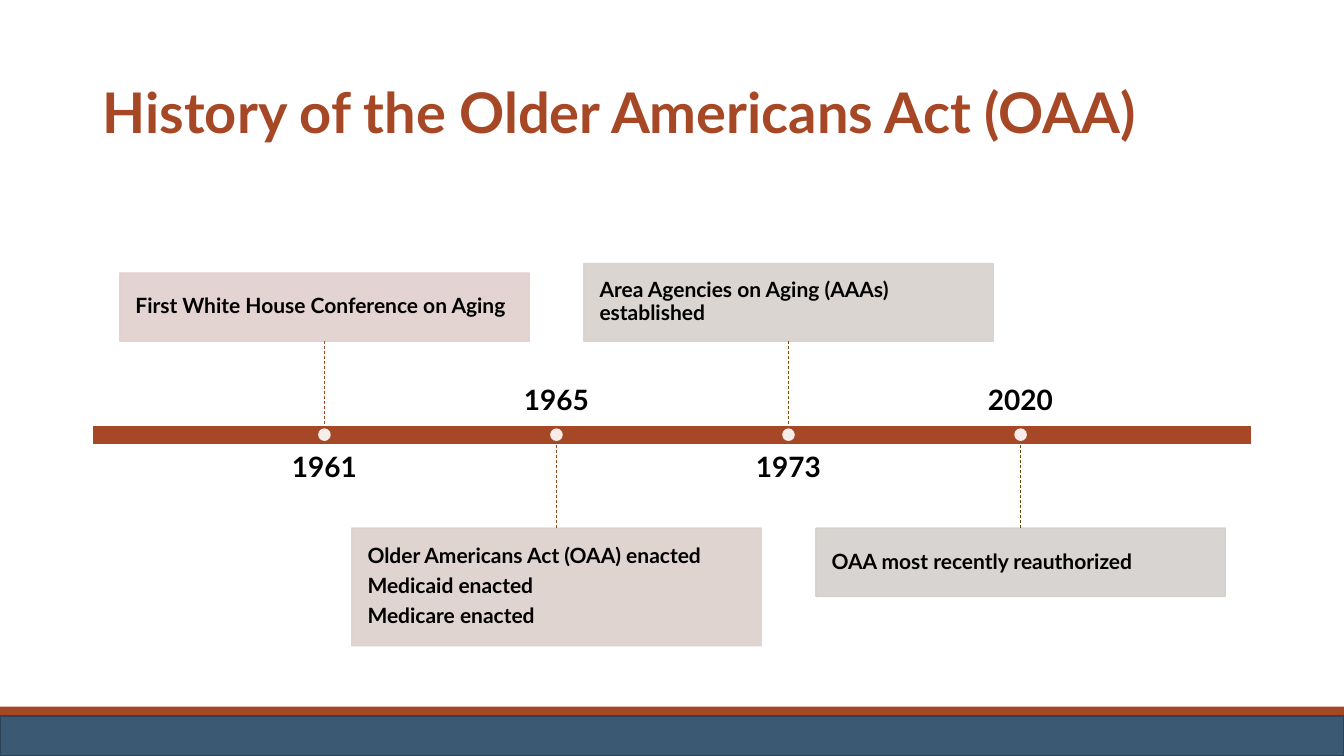
from lxml import etree
from pptx import Presentation, util as u
from pptx.dml.color import RGBColor
from pptx.enum import dml, shapes, text
from pptx.oxml import ns

PX = 9525  # EMU per px, 96 px to the inch
RUST = RGBColor(0xA6, 0x48, 0x26)
BLUE = RGBColor(0x3C, 0x59, 0x73)
NAVY = RGBColor(0x2C, 0x42, 0x55)
WHITE = RGBColor(0xFF, 0xFF, 0xFF)
BLACK = RGBColor(0, 0, 0)

BAR_LEFT, BAR_TOP, BAR_WIDTH, BAR_HEIGHT = 88, 405, 1104, 19
BAR_BOTTOM = BAR_TOP + BAR_HEIGHT
STEP = 221
BOX_WIDTH, DATE_WIDTH, DATE_HEIGHT, DOT = 390, 354, 53, 12
UPPER_BOX_BOTTOM, LOWER_BOX_TOP = 325, 503

# year, card height, card colour, connector colour, lines of text
EVENTS = [
    ("1961", 65, RGBColor(0xE1, 0xCF, 0xCD), RUST,
     ["First White House Conference on Aging"]),
    ("1965", 112, RGBColor(0xDD, 0xD0, 0xCC), RGBColor(0x94, 0x4B, 0x17),
     ["Older Americans Act (OAA) enacted", "Medicaid enacted", "Medicare enacted"]),
    ("1973", 74, RGBColor(0xD8, 0xD1, 0xCC), RGBColor(0x7E, 0x4D, 0x0B),
     ["Area Agencies on Aging (AAAs) established"]),
    ("2020", 65, RGBColor(0xD3, 0xD0, 0xCC), RGBColor(0x64, 0x4A, 0x03),
     ["OAA most recently reauthorized"]),
]

deck = Presentation()
deck.slide_width, deck.slide_height = 1280 * PX, 720 * PX
slide = deck.slides.add_slide(deck.slide_layouts[6])


def add_block(kind, left, top, width, height, fill, line=None, opacity=100):
    """Add a filled shape; opacity is a percentage for fill and line."""
    block = slide.shapes.add_shape(kind, left * PX, top * PX, width * PX, height * PX)
    block.shadow.inherit = False
    block.fill.solid()
    block.fill.fore_color.rgb = fill
    if line is None:
        block.line.fill.background()
    else:
        block.line.color.rgb = line
        block.line.width = u.Pt(1)
    if opacity < 100:
        for colour in block._element.spPr.iter(ns.qn("a:srgbClr")):
            etree.SubElement(colour, ns.qn("a:alpha"), val=str(opacity * 1000))
    return block


def write(box, lines, size, colour, anchor, align, inset_x, inset_y, after=0):
    frame = box.text_frame
    frame.word_wrap = True
    frame.vertical_anchor = anchor
    frame.margin_left = frame.margin_right = inset_x * PX
    frame.margin_top = frame.margin_bottom = inset_y * PX
    frame.text = "\n".join(lines)
    for para in frame.paragraphs:
        para.alignment = align
        para.line_spacing = 0.9
        para.space_after = u.Pt(after)
        for span in para.runs:
            span.font.name = "Lato"
            span.font.size = u.Pt(size)
            span.font.bold = True
            span.font.color.rgb = colour


RECT = shapes.MSO_SHAPE.RECTANGLE
ANCHOR, ALIGN = text.MSO_ANCHOR, text.PP_ALIGN

add_block(RECT, 0, 673, 1280, 47, RUST)
add_block(RECT, 0, 682, 1280, 38, BLUE, NAVY)

title = slide.shapes.add_textbox(88 * PX, 55 * PX, 1104 * PX, 110 * PX)
write(title, ["History of the Older Americans Act (OAA)"], 40, RUST,
      ANCHOR.MIDDLE, ALIGN.LEFT, 10, 5)

add_block(RECT, BAR_LEFT, BAR_TOP, BAR_WIDTH, BAR_HEIGHT, RUST, WHITE)

for number, (year, height, card_colour, link_colour, lines) in enumerate(EVENTS):
    center = BAR_LEFT + STEP * (number + 1)
    above = number % 2 == 0
    if above:
        card_top, date_top, date_anchor = UPPER_BOX_BOTTOM - height, 432, ANCHOR.TOP
        card_edge, bar_edge, side = UPPER_BOX_BOTTOM, BAR_TOP, 2
    else:
        card_top, date_top, date_anchor = LOWER_BOX_TOP, 344, ANCHOR.BOTTOM
        card_edge, bar_edge, side = LOWER_BOX_TOP, BAR_BOTTOM, 0

    date = slide.shapes.add_textbox((center - DATE_WIDTH // 2) * PX, date_top * PX,
                                    DATE_WIDTH * PX, DATE_HEIGHT * PX)
    write(date, [year], 20, BLACK, date_anchor, ALIGN.CENTER, 0, 0)

    card = add_block(RECT, center - BOX_WIDTH // 2, card_top, BOX_WIDTH, height,
                     card_colour, card_colour, 90)
    write(card, lines, 15, BLACK, ANCHOR.MIDDLE, ALIGN.LEFT, 15, 15, 5.25)

    link = slide.shapes.add_connector(shapes.MSO_CONNECTOR.STRAIGHT, center * PX,
                                      card_edge * PX, center * PX, bar_edge * PX)
    link.begin_connect(card, side)
    link.line.color.rgb = link_colour
    link.line.width = u.Pt(0.5)
    link.line.dash_style = dml.MSO_LINE.DASH
    etree.SubElement(link._element.spPr, ns.qn("a:effectLst"))

    add_block(shapes.MSO_SHAPE.OVAL, center - DOT // 2, 408, DOT, DOT, WHITE, opacity=90)

deck.save("out.pptx")
